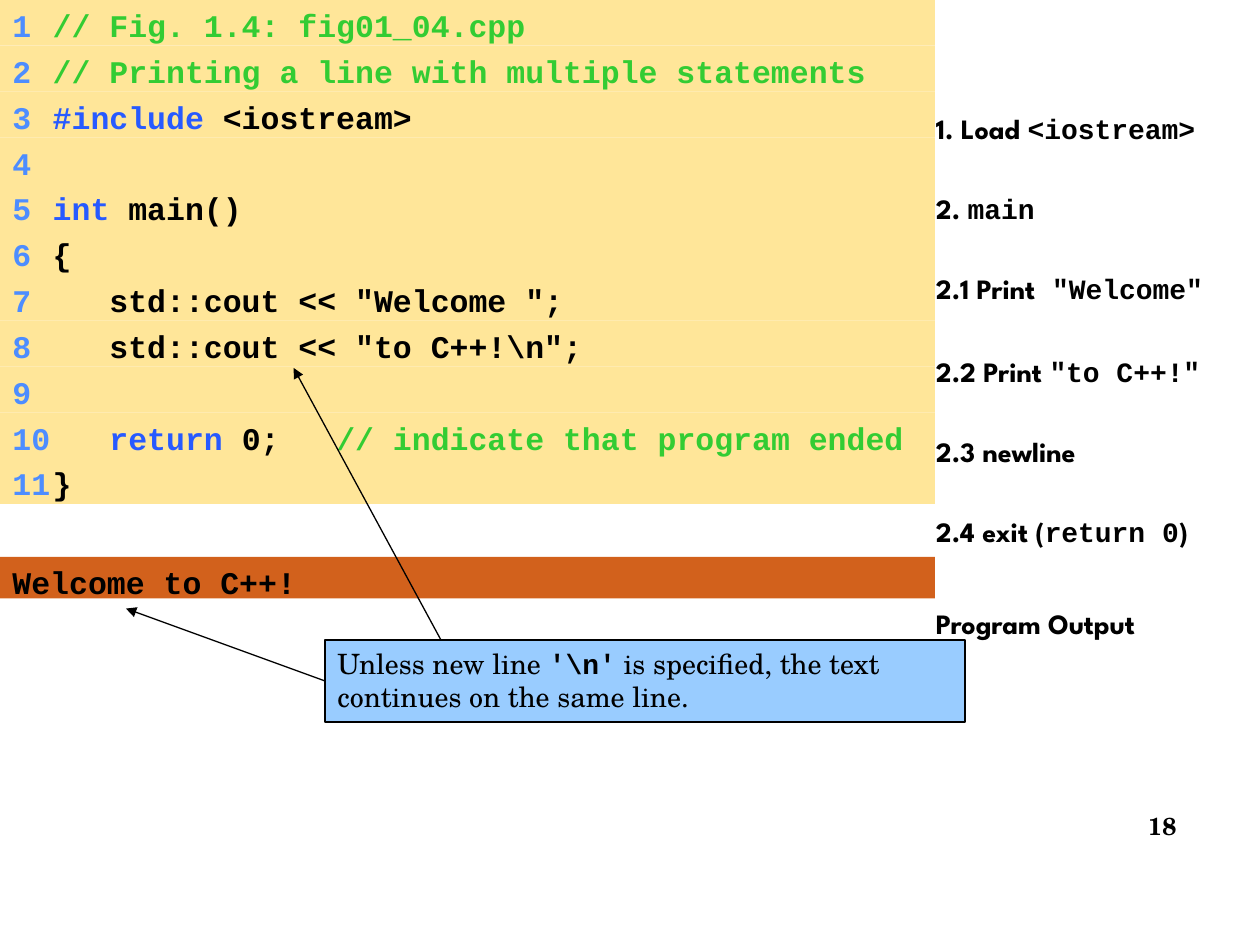
import pptx
import pptx.dml.color
import pptx.enum.shapes
import pptx.enum.text
import pptx.oxml
import pptx.oxml.ns
import pptx.util
from lxml import etree

Inches = pptx.util.Inches
Pt = pptx.util.Pt
RGBColor = pptx.dml.color.RGBColor
Align = pptx.enum.text.PP_ALIGN
Anchor = pptx.enum.text.MSO_ANCHOR

BLACK = RGBColor(0x00, 0x00, 0x00)
SAND = RGBColor(0xFF, 0xE6, 0x99)
RUST = RGBColor(0xD2, 0x61, 0x1C)
SKY = RGBColor(0x99, 0xCC, 0xFF)
NUMBER_BLUE = RGBColor(0x4D, 0x8D, 0xFF)
KEYWORD_BLUE = RGBColor(0x27, 0x5A, 0xFF)
COMMENT_GREEN = RGBColor(0x33, 0xCC, 0x33)

WIDTH, HEIGHT = 10, 7.5
CODE_WIDTH = 7.42
LINE_WEIGHT = 0.75
NUMBER_TABS = ((0.15, "r"), (0.32, "l"))

CODE = dict(name="Courier New", size=Pt(18), bold=True, color=BLACK)
NUMBER = CODE | dict(color=NUMBER_BLUE)
KEYWORD = CODE | dict(color=KEYWORD_BLUE)
COMMENT = CODE | dict(color=COMMENT_GREEN)
STEP = dict(name="League Spartan", size=Pt(16), bold=True, color=BLACK)
STEP_CODE = STEP | dict(name="Courier New")
NOTE = dict(name="TeX Gyre Schola", size=Pt(16), bold=False, color=BLACK)
NOTE_CODE = NOTE | dict(name="Courier New", bold=True)
PAGE = NOTE | dict(size=Pt(14), bold=True)

CODE_LINES = [
    [("// Fig. 1.4: fig01_04.cpp", COMMENT)],
    [("// Printing a line with multiple statements", COMMENT)],
    [("#include", KEYWORD), (" <iostream>", CODE)],
    [],
    [("int", KEYWORD), (" main()", CODE)],
    [("{", CODE)],
    [('   std::cout << "Welcome ";', CODE)],
    [('   std::cout << "to C++!\\n";', CODE)],
    [],
    [("   return", KEYWORD), (" 0;   ", CODE),
     ("// indicate that program ended", COMMENT)],
    [("}", CODE)],
]

# Each step: space before in points, then its runs
STEPS = [
    (6, [("1. Load ", STEP), ("<iostream>", STEP_CODE)]),
    (26.5, [("2. ", STEP), ("main", STEP_CODE)]),
    (26.5, [("2.1 Print", STEP), (' "Welcome"', STEP_CODE)]),
    (28.5, [("2.2 Print ", STEP), ('"to C++!"', STEP_CODE)]),
    (26.5, [("2.3 newline", STEP)]),
    (26.5, [("2.4 exit (", STEP), ("return 0", STEP_CODE), (")", STEP)]),
    (33.5, [("Program Output", STEP)]),
]


def add_runs(paragraph, runs):
    for text, style in runs:
        run = paragraph.add_run()
        run.text = text
        for attribute, value in style.items():
            if attribute == "color":
                run.font.color.rgb = value
            else:
                setattr(run.font, attribute, value)


def set_tabs(paragraph, stops):
    properties = paragraph._p.get_or_add_pPr()
    tab_list = etree.SubElement(properties, pptx.oxml.ns.qn("a:tabLst"))
    for position, alignment in stops:
        etree.SubElement(tab_list, pptx.oxml.ns.qn("a:tab"),
                         pos=str(Inches(position)), algn=alignment)


def set_frame(shape, anchor=Anchor.TOP):
    settings = dict(word_wrap=True, vertical_anchor=anchor,
                    margin_left=Inches(0.1), margin_right=Inches(0.1),
                    margin_top=Inches(0.05), margin_bottom=Inches(0.05))
    for attribute, value in settings.items():
        setattr(shape.text_frame, attribute, value)
    return shape.text_frame


def add_panel(slide, box, fill, runs):
    """Filled rectangle with one left-aligned paragraph."""
    shape = slide.shapes.add_shape(
        pptx.enum.shapes.MSO_SHAPE.RECTANGLE, *map(Inches, box))
    shape.shadow.inherit = False
    shape.fill.solid()
    shape.fill.fore_color.rgb = fill
    shape.line.fill.background()
    paragraph = set_frame(shape).paragraphs[0]
    paragraph.alignment = Align.LEFT
    add_runs(paragraph, runs)
    return shape


def add_arrow(slide, start, end):
    arrow = slide.shapes.add_connector(
        pptx.enum.shapes.MSO_CONNECTOR.STRAIGHT,
        *map(Inches, (*start, *end)))
    arrow.line.color.rgb = BLACK
    arrow.line.width = Pt(LINE_WEIGHT)
    etree.SubElement(arrow.line._get_or_add_ln(),
                     pptx.oxml.ns.qn("a:tailEnd"), type="triangle")
    etree.SubElement(arrow._element.spPr, pptx.oxml.ns.qn("a:effectLst"))
    return arrow


def add_listing(slide, box):
    """Numbered code lines in equal rows."""
    left, top, width, height = box
    row = height / len(CODE_LINES)
    for index, runs in enumerate(CODE_LINES):
        number = (f"\t{index + 1}\t", NUMBER)
        shape = add_panel(slide, (left, top + index * row, width, row),
                          SAND, [number, *runs])
        set_tabs(shape.text_frame.paragraphs[0], NUMBER_TABS)


def add_outline(slide, box):
    """Steps of the program, down the right side."""
    frame = set_frame(slide.shapes.add_textbox(*map(Inches, box)))
    for index, (space, runs) in enumerate(STEPS):
        paragraph = frame.add_paragraph() if index else frame.paragraphs[0]
        paragraph.space_before = Pt(space)
        add_runs(paragraph, runs)


def add_callout(slide, box):
    """Note with arrows to the code and to the output."""
    left, top, width, height = box
    note = add_panel(slide, box, SKY, [
        ("Unless new line ", NOTE), ("'\\n'", NOTE_CODE),
        (" is specified, the text continues on the same line.", NOTE)])
    note.line.color.rgb = BLACK
    note.line.width = Pt(LINE_WEIGHT)
    to_output = add_arrow(slide, (left, top + height / 2),
                          (left - 1.58, top - 0.25))
    to_output.begin_connect(note, 1)
    add_arrow(slide, (left + 0.92, top), (left - 0.25, top - 2.16))


def add_page_number(slide, box):
    shape = slide.shapes.add_textbox(*map(Inches, box))
    paragraph = set_frame(shape, anchor=Anchor.MIDDLE).paragraphs[0]
    paragraph.alignment = Align.CENTER
    add_runs(paragraph, [("18", PAGE)])


def main():
    presentation = pptx.Presentation()
    presentation.slide_width = Inches(WIDTH)
    presentation.slide_height = Inches(HEIGHT)
    slide = presentation.slides.add_slide(presentation.slide_layouts[6])

    add_outline(slide, (WIDTH * 0.733, HEIGHT / 9, WIDTH * 0.267, HEIGHT * 8 / 9))
    add_page_number(slide, (8.89, 6.27, 0.67, 0.57))
    # Program output
    add_panel(slide, (0, 4.42, CODE_WIDTH, 0.33), RUST,
              [("Welcome to C++!", CODE)])
    add_listing(slide, (0, 0, CODE_WIDTH, 4))
    add_callout(slide, (2.58, 5.08, 5.08, 0.65))

    presentation.save("out.pptx")


if __name__ == "__main__":
    main()
